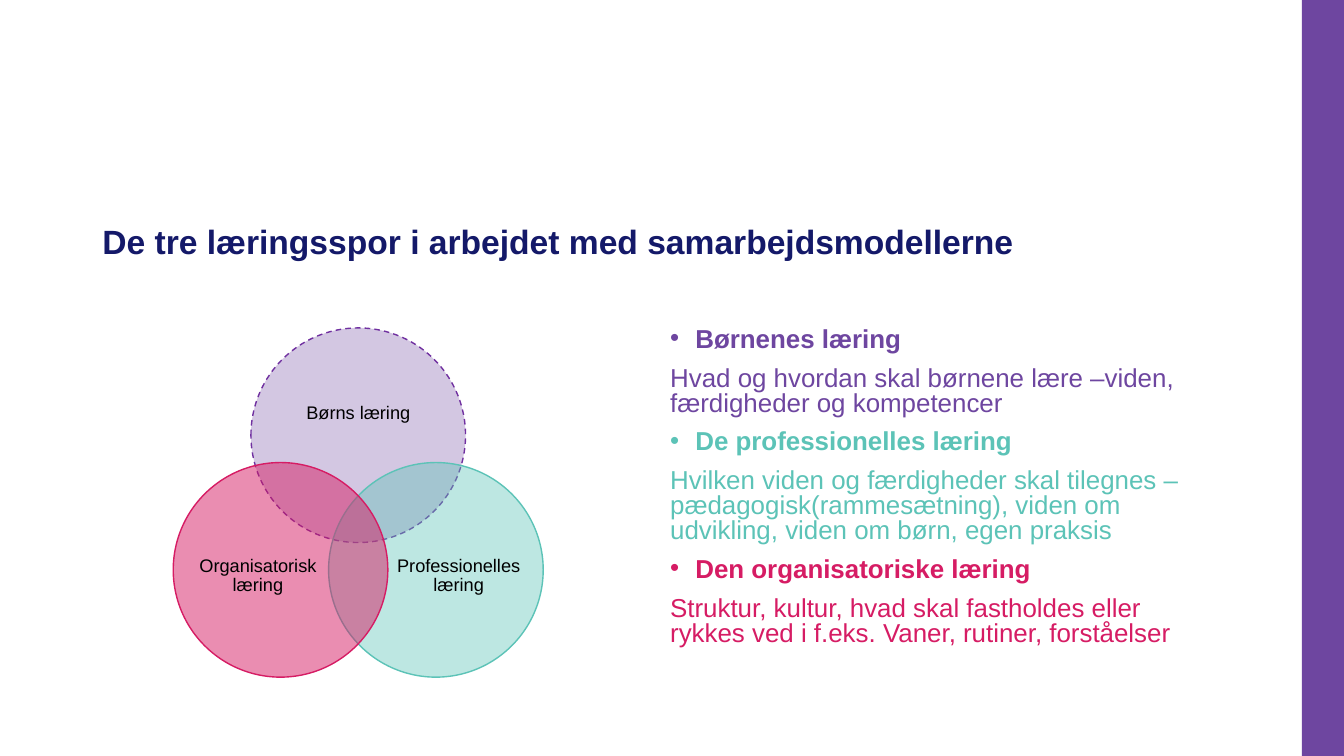
import math

from lxml import etree
from pptx import Presentation
from pptx import util as u
from pptx.dml.color import RGBColor
from pptx.enum import dml, shapes, text
from pptx.oxml.ns import qn

COLUMNS, ROWS = 32, 18
CELL = u.Inches(7.5) / ROWS
COLORS = {
    "navy": "141969",
    "purple": "6E46A0",
    "dash": "7030A0",
    "teal": "5CC3B7",
    "pink": "D61C64",
    "black": "000000",
}
DIAMETER, SPACING = 5.11, 3.7
VENN_CENTRE = (8.53, 12.5)
CIRCLES = [
    # angle, fill, line, opacity, dashed, label, label centre, label size
    (-90, "purple", "dash", 30, True, "Børns læring", (8.53, 9.84), (3.74, 2.3)),
    (30, "teal", "teal", 40, False, "Professionelles læring", (10.92, 13.72), (3.07, 2.81)),
    (150, "pink", "pink", 50, False, "Organisatorisk læring", (6.14, 13.72), (3.07, 2.81)),
]
TRACKS = [
    ("purple", "Børnenes læring",
     "Hvad og hvordan skal børnene lære –viden, færdigheder og kompetencer"),
    ("teal", "De professionelles læring",
     "Hvilken viden og færdigheder skal tilegnes – pædagogisk(rammesætning), "
     "viden om udvikling, viden om børn, egen praksis"),
    ("pink", "Den organisatoriske læring",
     "Struktur, kultur, hvad skal fastholdes eller rykkes ved i f.eks. "
     "Vaner, rutiner, forståelser"),
]


def cells(*counts):
    return [u.Emu(round(count * CELL)) for count in counts]


def color(name):
    return RGBColor.from_string(COLORS[name])


def centred(centre, size):
    return [c - s / 2 for c, s in zip(centre, size)] + list(size)


def add_shape(slide, kind, area, fill):
    shape = slide.shapes.add_shape(kind, *cells(*area))
    shape.shadow.inherit = False
    shape.fill.solid()
    shape.fill.fore_color.rgb = color(fill)
    shape.line.fill.background()
    return shape


def add_circle(slide, angle, fill, line, opacity, dashed):
    centre = [
        VENN_CENTRE[0] + SPACING / math.sqrt(3) * math.cos(math.radians(angle)),
        VENN_CENTRE[1] + SPACING / math.sqrt(3) * math.sin(math.radians(angle)),
    ]
    area = centred(centre, (DIAMETER, DIAMETER))
    circle = add_shape(slide, shapes.MSO_SHAPE.OVAL, area, fill)
    tint = circle.fill._xPr.find(qn("a:solidFill"))[0]
    etree.SubElement(tint, qn("a:alpha"), val=str(opacity * 1000))
    circle.line.color.rgb = color(line)
    circle.line.width = u.Pt(1)
    if dashed:
        circle.line.dash_style = dml.MSO_LINE.DASH


def add_frame(slide, area, anchor):
    frame = slide.shapes.add_textbox(*cells(*area)).text_frame
    frame.word_wrap = True
    frame.vertical_anchor = anchor
    return frame


def add_run(paragraph, words, size, ink, bold=False):
    run = paragraph.add_run()
    run.text = words
    run.font.name = "Arial"
    run.font.size = u.Pt(size)
    run.font.bold = bold
    run.font.color.rgb = color(ink)


def add_title(slide, words):
    frame = add_frame(slide, (2.2, 3.8, 27, 2.54), text.MSO_ANCHOR.BOTTOM)
    frame.paragraphs[0].line_spacing = 0.9
    add_run(frame.paragraphs[0], words, 24, "navy", True)


def add_label(slide, words, centre, size):
    frame = add_frame(slide, centred(centre, size), text.MSO_ANCHOR.MIDDLE)
    frame.margin_left = frame.margin_right = frame.margin_top = frame.margin_bottom = 0
    paragraph = frame.paragraphs[0]
    paragraph.alignment = text.PP_ALIGN.CENTER
    paragraph.line_spacing = 0.9
    add_run(paragraph, words, 13, "black")


def add_bullet(paragraph):
    indent = u.Inches(0.25)
    properties = paragraph._p.get_or_add_pPr()
    properties.set("marL", str(indent))
    properties.set("indent", str(-indent))
    etree.SubElement(properties, qn("a:buFont"), typeface="Arial")
    etree.SubElement(properties, qn("a:buChar"), char="•")


def add_tracks(slide):
    frame = add_frame(slide, (15.72, 7.7, 13.49, 8.52), text.MSO_ANCHOR.TOP)
    for number, (ink, heading, description) in enumerate(TRACKS):
        for words, is_heading in ((heading, True), (description, False)):
            first = number == 0 and is_heading
            paragraph = frame.paragraphs[0] if first else frame.add_paragraph()
            if is_heading:
                add_bullet(paragraph)
            paragraph.line_spacing = 0.8
            paragraph.space_before = u.Pt(0 if first else 10)
            add_run(paragraph, words, 18.5, ink, is_heading)


def main():
    """Build the slide on the three learning tracks."""
    deck = Presentation()
    deck.slide_width, deck.slide_height = cells(COLUMNS, ROWS)
    slide = deck.slides.add_slide(deck.slide_layouts[6])
    add_shape(slide, shapes.MSO_SHAPE.RECTANGLE, (COLUMNS - 1, 0, 1, ROWS), "purple")
    add_title(slide, "De tre læringsspor i arbejdet med samarbejdsmodellerne")
    for *circle, label, centre, size in CIRCLES:
        add_circle(slide, *circle)
        add_label(slide, label, centre, size)
    add_tracks(slide)
    deck.save("out.pptx")


if __name__ == "__main__":
    main()
